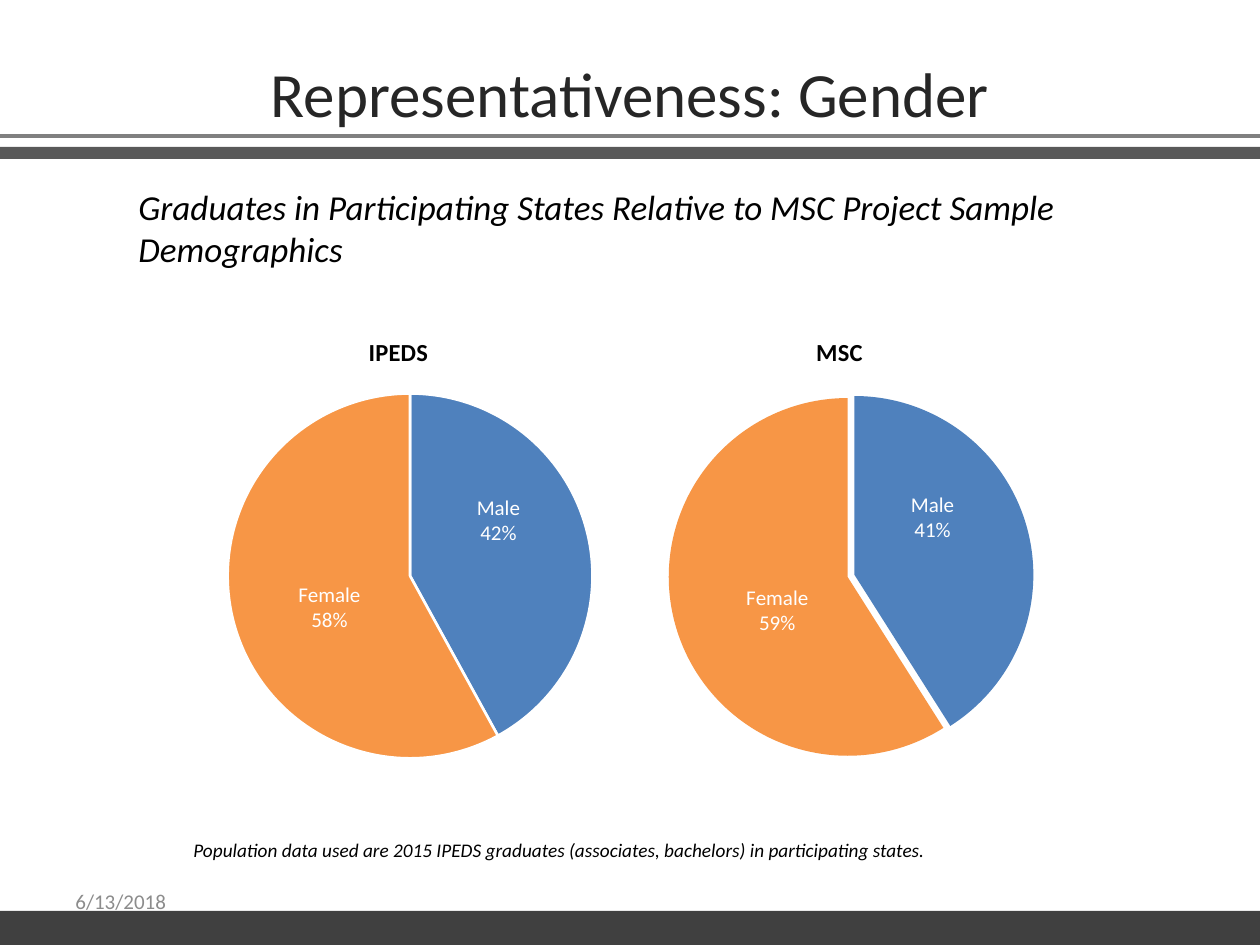
from dataclasses import dataclass

from lxml import etree
from pptx import Presentation
from pptx import util as u
from pptx.chart.data import CategoryChartData
from pptx.dml.color import RGBColor
from pptx.enum import chart as ch, shapes, text
from pptx.oxml import parse_xml
from pptx.oxml.ns import nsdecls, qn

PX = 914400 / 126


@dataclass(frozen=True)
class Theme:
    """Colours, font and type sizes of the deck."""
    font: str = "Calibri"
    ink: str = "000000"
    head: str = "262626"
    date: str = "8C8C8C"
    rule: str = "808080"
    band: str = "595959"
    foot: str = "404040"
    white: str = "FFFFFF"
    slices: tuple = ("4F81BD", "F79646")
    title: int = 36
    lead: int = 20
    chart: int = 18
    name: int = 14
    label: int = 12
    note: int = 11


def emu(*nums):
    """Turn px into EMU."""
    return [u.Emu(round(n * PX)) for n in nums]


def place(**parts):
    """Make a manual chart layout from its named parts."""
    tags = "".join(f'<c:{k} val="{v}"/>' for k, v in parts.items())
    return parse_xml(f'<c:layout {nsdecls("c")}><c:manualLayout>{tags}'
                     '</c:manualLayout></c:layout>')


class Page:
    """Draws styled elements on one slide."""

    def __init__(self, deck, theme):
        """Add a title-only slide."""
        self.theme = theme
        self.slide = deck.slides.add_slide(deck.slide_layouts[5])

    def style(self, font, size, color, bold=False, italic=False):
        """Set a font's look."""
        font.name, font.size = self.theme.font, u.Pt(size)
        font.bold, font.italic = bold, italic
        font.color.rgb = RGBColor.from_string(color)

    def fill(self, shape, words, size, color, italic=False,
             align=text.PP_ALIGN.LEFT, anchor=text.MSO_ANCHOR.TOP):
        """Put styled words in a shape."""
        frame = shape.text_frame
        frame.text, frame.word_wrap = words, True
        frame.auto_size = text.MSO_AUTO_SIZE.NONE
        frame.vertical_anchor = anchor
        para = frame.paragraphs[0]
        para.alignment = align
        self.style(para.font, size, color, italic=italic)

    def title(self, words, box):
        """Set the title placeholder."""
        shape = self.slide.shapes.title
        shape.left, shape.top, shape.width, shape.height = emu(*box)
        self.fill(shape, words, self.theme.title, self.theme.head,
                  align=text.PP_ALIGN.CENTER)

    def text(self, words, box, size, color, **look):
        """Add a text box."""
        self.fill(self.slide.shapes.add_textbox(*emu(*box)),
                  words, size, color, **look)

    def bar(self, box, color):
        """Add a plain band."""
        shape = self.slide.shapes.add_shape(
            shapes.MSO_SHAPE.RECTANGLE, *emu(*box))
        shape.shadow.inherit = False
        shape.fill.solid()
        shape.fill.fore_color.rgb = RGBColor.from_string(color)
        shape.line.fill.background()

    def line(self, ends, color, width):
        """Add a straight line."""
        line = self.slide.shapes.add_connector(
            shapes.MSO_CONNECTOR.STRAIGHT, *emu(*ends))
        line.line.color.rgb = RGBColor.from_string(color)
        line.line.width = u.Pt(width)
        etree.SubElement(line._element.spPr, qn("a:effectLst"))

    def pie(self, name, values, box, shifts, burst=0):
        """Add a titled pie chart."""
        look = self.theme
        data = CategoryChartData()
        data.categories = ["Male", "Female"]
        data.add_series(name, values)
        chart = self.slide.shapes.add_chart(
            ch.XL_CHART_TYPE.PIE, *emu(*box), data).chart
        self.style(chart.font, look.chart, look.ink)
        chart.has_legend = False
        chart.has_title = True
        chart.chart_title.include_in_layout = False
        head = chart.chart_title.text_frame
        head.text = name
        self.style(head.paragraphs[0].font, look.name, look.ink, bold=True)
        plot = chart.plots[0]
        plot.vary_by_categories = True
        series = plot.series[0]
        area = chart._chartSpace.chart.plotArea
        for old in area.findall(qn("c:layout")):
            area.remove(old)
        area.insert(0, place(layoutTarget="inner", xMode="edge", yMode="edge",
                             x=0.28, y=0.17, w=0.47, h=0.79))
        labels = series.data_labels
        labels.show_value = False
        labels.show_category_name = labels.show_percentage = True
        self.style(labels.font, look.label, look.white)
        for i, (color, shift) in enumerate(zip(look.slices, shifts)):
            point = series.points[i]
            point.format.fill.solid()
            point.format.fill.fore_color.rgb = RGBColor.from_string(color)
            if not burst:
                point.format.line.color.rgb = RGBColor.from_string(look.white)
                point.format.line.width = u.Pt(1.5)
            self.style(point.data_label.font, look.label, look.white)
            point.data_label.position = ch.XL_LABEL_POSITION.CENTER
            self.label(series._element.findall(".//" + qn("c:dLbl"))[i], shift)
        if burst:
            part = parse_xml(f'<c:explosion {nsdecls("c")} val="{burst}"/>')
            series._element.find(qn("c:tx")).addnext(part)

    def label(self, node, shift):
        """Show category over percent, moved from the slice centre."""
        node.find(qn("c:idx")).addnext(place(x=shift[0], y=shift[1]))
        for tag, flag in (("showVal", 0), ("showCatName", 1),
                          ("showPercent", 1)):
            node.find(qn("c:" + tag)).set("val", str(flag))
        etree.SubElement(node, qn("c:separator")).text = "\n"


def main():
    """Build the slide."""
    deck = Presentation()
    deck.slide_width, deck.slide_height = emu(1260, 945)
    look = Theme()
    page = Page(deck, look)
    page.title("Representativeness: Gender", (0, 48, 1260, 89))
    page.text("Graduates in Participating States Relative to MSC Project "
              "Sample Demographics", (126, 179, 1040, 97),
              look.lead, look.ink, italic=True)
    page.bar((-2, 147, 1262, 12), look.band)
    page.bar((0, 911, 1261, 36), look.foot)
    page.line((0, 136, 1261, 136), look.rule, 2.25)
    page.pie("IPEDS", (42, 58), (10, 315, 777, 462),
             ((0, -0.07), (0.01, 0.02)))
    page.pie("MSC", (41, 59), (451, 315, 777, 462),
             ((-0.01, -0.07), (0.02, 0.02)), burst=2)
    page.text("6/13/2018", (63, 876, 294, 50), look.label, look.date,
              anchor=text.MSO_ANCHOR.MIDDLE)
    page.text("Population data used are 2015 IPEDS graduates (associates, "
              "bachelors) in participating states.", (181, 832, 966, 36),
              look.note, look.ink, italic=True)
    deck.save("out.pptx")


if __name__ == "__main__":
    main()
